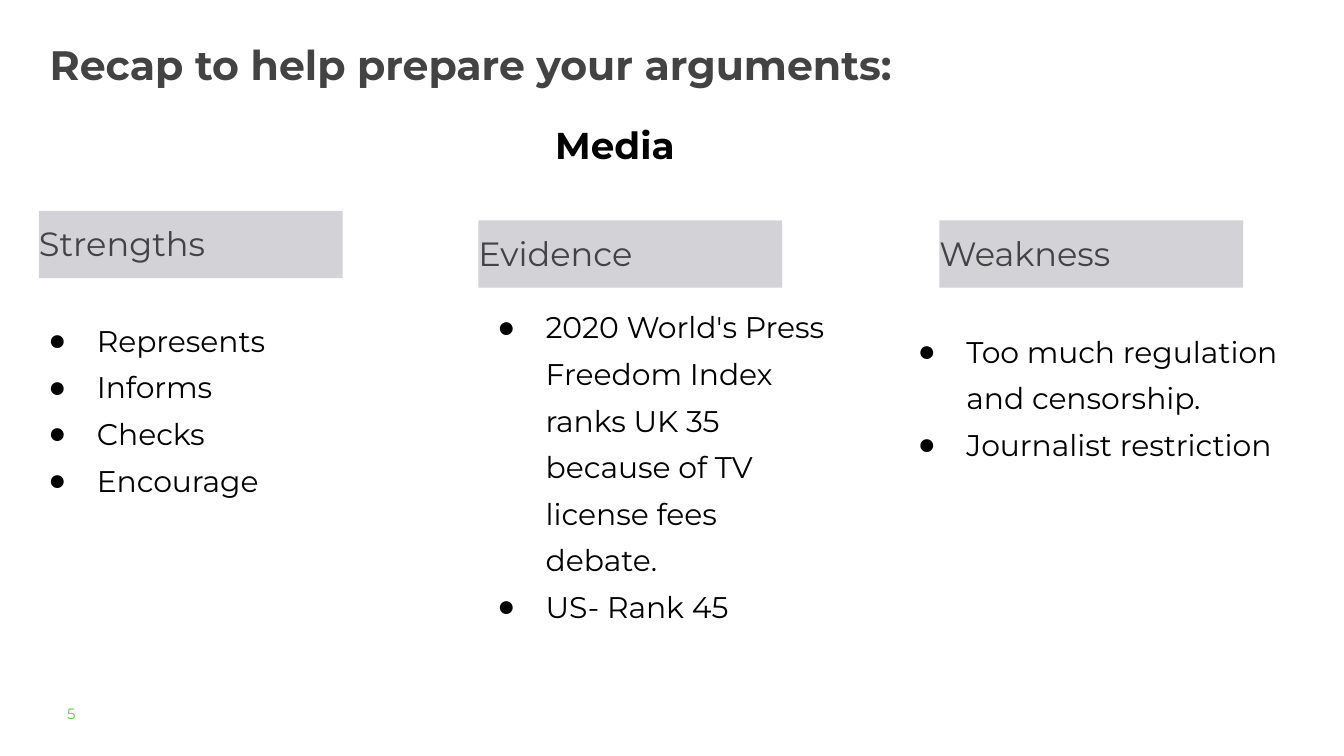
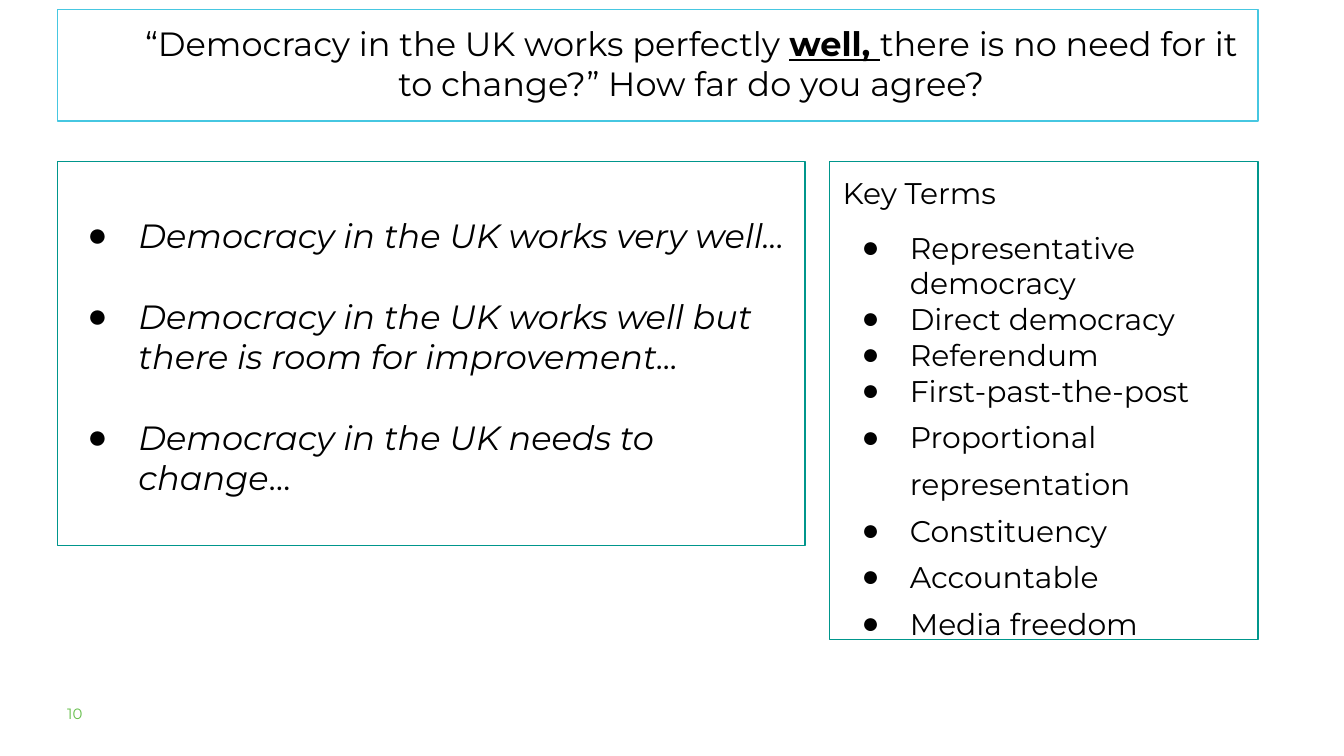
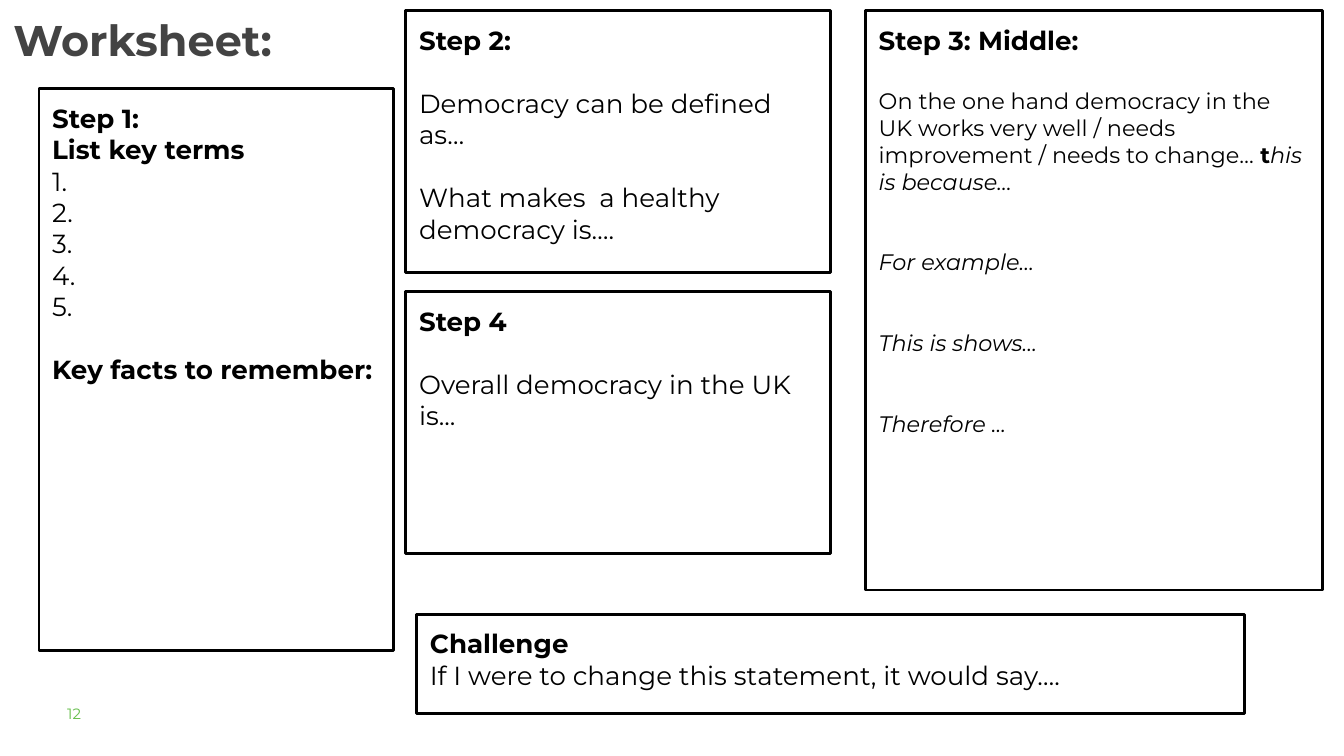
from lxml import etree
from pptx import Presentation
from pptx.dml.color import RGBColor
from pptx.enum.shapes import MSO_SHAPE
from pptx.enum.text import MSO_ANCHOR, MSO_AUTO_SIZE, PP_ALIGN
from pptx.oxml.ns import qn
from pptx.util import Inches, Pt

FONT = "Montserrat"
COLORS = {
    "black": "000000",
    "heading": "434343",
    "band": "D2D2D7",
    "number": "65BE4B",
    "question": "46C7E1",
    "panel": "00968C",
}


def write(shape, lines, size, color="black", inset=0.1, spacing=1.0, hang=None, bold=False):
    """Fill a shape with one paragraph per line; hang is the bullet's hanging indent."""
    frame = shape.text_frame
    frame.word_wrap = True
    frame.auto_size = MSO_AUTO_SIZE.NONE
    frame.vertical_anchor = MSO_ANCHOR.TOP
    frame.margin_left = frame.margin_right = Inches(inset)
    frame.margin_top = frame.margin_bottom = Inches(inset)
    frame.text = "\n".join(lines)
    for paragraph in frame.paragraphs:
        properties = paragraph._p.get_or_add_pPr()
        properties.set("marL", str(Inches(0.5 if hang else 0)))
        properties.set("indent", str(-Inches(hang or 0)))
        if hang:
            bullet_color = etree.SubElement(properties, qn("a:buClr"))
            etree.SubElement(bullet_color, qn("a:srgbClr"), val=COLORS["black"])
            etree.SubElement(properties, qn("a:buChar"), char="●")
        else:
            etree.SubElement(properties, qn("a:buNone"))
        paragraph.alignment = PP_ALIGN.LEFT
        paragraph.line_spacing = spacing
        paragraph.space_before = Pt(0)
        paragraph.font.name = FONT
        paragraph.font.size = Pt(size)
        paragraph.font.bold = bold
        paragraph.font.color.rgb = RGBColor.from_string(COLORS[color])
    return frame.paragraphs


def style_box(shape, at, fill=None, line=None, width=0.75):
    shape.left, shape.top, shape.width, shape.height = map(Inches, at)
    if fill:
        shape.fill.solid()
        shape.fill.fore_color.rgb = RGBColor.from_string(COLORS[fill])
    else:
        shape.fill.background()
    if line:
        shape.line.color.rgb = RGBColor.from_string(COLORS[line])
        shape.line.width = Pt(width)
    else:
        shape.line.fill.background()


prs = Presentation()
prs.slide_width = Inches(10)
prs.slide_height = prs.slide_width * 9 // 16
two_content, comparison, title_only = (prs.slide_layouts[i] for i in (3, 4, 5))

# Recap: three columns on the media
recap = prs.slides.add_slide(comparison)
style_box(recap.shapes.title, (0.37, 0.24, 8.91, 0.67))
write(recap.shapes.title, ["Recap to help prepare your arguments:"], 22, "heading",
      inset=0, spacing=1.15, bold=True)

topic = recap.shapes.add_textbox(Inches(3.86), Inches(0.81), Inches(1.51), Inches(0.49))
write(topic, ["Media "], 20, bold=True)[0].alignment = PP_ALIGN.CENTER

columns = [
    ("Strengths", (0.29, 1.57), (0.22, 2.32, 2.87, 1.76),
     ["Represents", "Informs", "Checks", "Encourage"]),
    ("Evidence", (3.56, 1.64), (3.56, 2.22, 2.63, 1.52),
     ["2020 World's Press Freedom Index ranks UK 35 because of TV license fees debate.",
      "US- Rank 45"]),
    ("Weakness", (6.99, 1.64), (6.69, 2.4, 2.87, 1.52),
     ["Too much regulation and censorship.", "Journalist restriction"]),
]
points, spare = list(recap.placeholders)[1:4], list(recap.placeholders)[4]
spare._element.getparent().remove(spare._element)
for point_list, (heading, corner, list_at, lines) in zip(points, columns):
    band = recap.shapes.add_shape(MSO_SHAPE.RECTANGLE, 0, 0, 0, 0)
    band.shadow.inherit = False
    style_box(band, (*corner, 2.26, 0.5), fill="band")
    write(band, [heading], 18, "heading", inset=0, spacing=1.3)
    style_box(point_list, list_at)
    write(point_list, lines, 16, inset=0, spacing=1.3, hang=0.36)

# Debate: question, possible answers and key terms
debate = prs.slides.add_slide(two_content)
question, answers, key_terms = debate.placeholders
style_box(question, (0.43, 0.07, 8.93, 0.83), line="question")
statement = write(question, ["“Democracy in the UK works perfectly "], 18)[0]
statement.alignment = PP_ALIGN.CENTER
statement._p.pPr.set("marL", str(Inches(0.5)))
stressed = statement.add_run()
stressed.text = "well, "
stressed.font.bold = stressed.font.underline = True
statement.add_run().text = "there is no need for it to change?” How far do you agree?"

style_box(answers, (0.43, 1.2, 5.56, 2.86), line="panel")
openings = write(answers, [
    "Democracy in the UK works very well...",
    "Democracy in the UK works well but there is room for improvement...",
    "Democracy in the UK needs to change",
], 18, hang=0.38)
answers.text_frame.margin_top = Inches(0.4)
for opening in openings:
    opening.font.italic = True
for opening in openings[1:]:
    opening.space_before = Pt(21.6)
ellipsis = openings[-1].add_run()
ellipsis.text = "…"
ellipsis.font.italic = False

style_box(key_terms, (6.17, 1.2, 3.19, 3.56), line="panel")
terms = write(key_terms, [
    "Key Terms", "Representative democracy", "Direct democracy", "Referendum",
    "First-past-the-post", "Proportional representation", "Constituency",
    "Accountable", "Media freedom",
], 16, hang=0.36)
terms_heading = terms[0]._p.pPr
terms_heading.set("marL", "0")
terms_heading.set("indent", "0")
terms_heading.remove(terms_heading.find(qn("a:buClr")))
terms_heading.replace(terms_heading.find(qn("a:buChar")), etree.Element(qn("a:buNone")))
terms[1].space_before = Pt(10)
for term in terms[5:]:
    term.line_spacing = 1.3

# Worksheet: each line is text, style (b bold, i italic), size, space before
worksheet = prs.slides.add_slide(title_only)
style_box(worksheet.shapes.title, (0, 0, 6.5, 0.83))
write(worksheet.shapes.title, ["Worksheet:"], 23, "heading", bold=True)

steps = [
    ((0.29, 0.66, 2.64, 4.18),
     [("Step 1:", "b", 14, 0), ("List key terms", "b", 14, 0)]
     + [(f"{n}.", "", 14, 0) for n in range(1, 6)]
     + [("Key facts to remember:", "b", 14, 17)]),
    ((3.02, 0.08, 3.16, 1.95),
     [("Step 2:", "b", 14, 0),
      ("Democracy can be defined as…", "", 14, 17),
      ("What makes  a healthy democracy is….", "", 14, 17)]),
    ((3.02, 2.17, 3.16, 1.95),
     [("Step 4", "b", 14, 0), ("Overall democracy in the UK is...", "", 14, 17)]),
    ((3.1, 4.57, 6.16, 0.74),
     [("Challenge", "b", 14, 0),
      ("If I were to change this statement, it would say….", "", 14, 0)]),
    ((6.44, 0.08, 3.4, 4.31),
     [("Step 3: Middle:", "b", 14, 0),
      ("On the one hand democracy in the UK works very well / needs", "", 12, 17),
      ("improvement / needs to change… ", "", 12, 0),
      ("For example…", "i", 12, 28.8),
      ("This is shows…", "i", 12, 28.8),
      ("Therefore ...", "i", 12, 28.8)]),
]
for at, lines in steps:
    step = worksheet.shapes.add_shape(MSO_SHAPE.RECTANGLE, 0, 0, 0, 0)
    step.shadow.inherit = False
    style_box(step, at, line="black", width=1.5)
    prompts = write(step, [line[0] for line in lines], 14)
    for prompt, (_, style, size, before) in zip(prompts, lines):
        prompt.font.bold = "b" in style
        prompt.font.italic = "i" in style
        prompt.font.size = Pt(size)
        prompt.space_before = Pt(before)

# The last box written is Step 3, whose third line changes style midway
initial, reason = prompts[2].add_run(), prompts[2].add_run()
initial.text, reason.text = "t", "his is because…"
initial.font.bold = True
reason.font.italic = True

for slide, number in zip(prs.slides, (5, 10, 12)):
    footer = slide.shapes.add_textbox(Inches(0.5), Inches(5.24), Inches(0.79), Inches(0.2))
    write(footer, [str(number)], 8, "number", inset=0)

prs.save("out.pptx")
